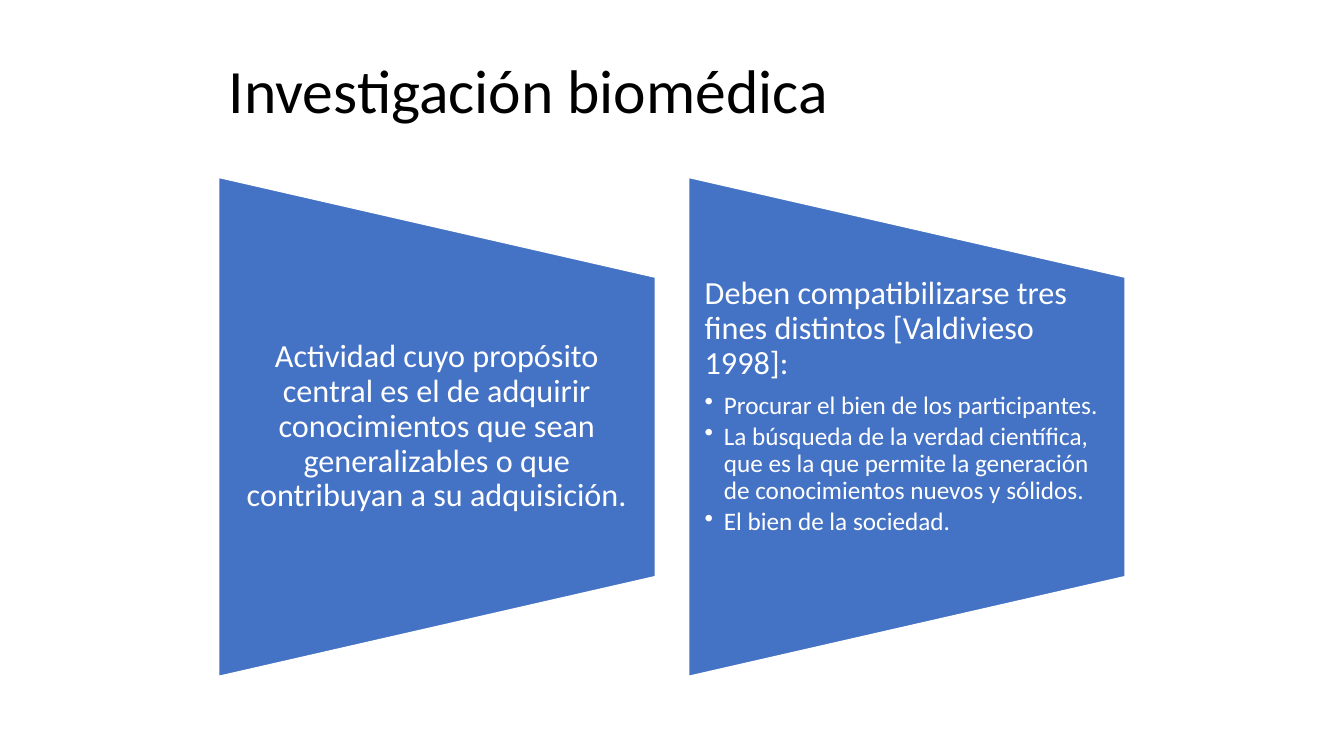
from lxml import etree
from pptx import Presentation
from pptx.dml.color import RGBColor
from pptx.enum.shapes import MSO_SHAPE as Shape
from pptx.enum.text import MSO_ANCHOR as Anchor, PP_ALIGN as Align
from pptx.oxml.ns import qn
from pptx.util import Inches, Pt

WHITE, BLUE, BLACK = "FFFFFF", "4472C4", "000000"
LEFT, TOP, WIDTH, HEIGHT, STEP = 2.17, 1.76, 4.33, 4.95, 4.66

PANELS = [
    (Align.CENTER, Anchor.MIDDLE,
     "Actividad cuyo propósito central es el de adquirir conocimientos que sean "
     "generalizables o que contribuyan a su adquisición.", []),
    (Align.LEFT, Anchor.TOP,
     "Deben compatibilizarse tres fines distintos [Valdivieso 1998]:",
     ["Procurar el bien de los participantes.",
      "La búsqueda de la verdad científica, que es la que permite la generación "
      "de conocimientos nuevos y sólidos.",
      "El bien de la sociedad."]),
]


def color(code):
    return RGBColor.from_string(code)


def style(para, text, size, code, align, after=0):
    para.text = text
    para.alignment = align
    para.line_spacing = 0.9
    para.space_before = Pt(0)
    para.space_after = Pt(after)
    font = para.runs[0].font
    font.name, font.size = "Calibri", Pt(size)
    font.color.rgb = color(code)


def bullet(para):
    props = para._p.get_or_add_pPr()
    props.set("lvl", "1")
    props.set("marL", str(Inches(0.19)))
    props.set("indent", str(Inches(-0.19)))
    etree.SubElement(props, qn("a:buChar")).set("char", "•")


def add_title(slide, x, y, w, h):
    title = slide.shapes.title
    title.left, title.top, title.width, title.height = map(Inches, (x, y, w, h))
    frame = title.text_frame
    frame.vertical_anchor = Anchor.MIDDLE
    style(frame.paragraphs[0], "Investigación biomédica", 44, BLACK, Align.LEFT)


def add_panel(slide, x, y, w, h, panel):
    """Fill the box with a sideways trapezoid and lay text over its middle 60 %."""
    align, anchor, lead, points = panel
    shift = (h - w) / 2
    shape = slide.shapes.add_shape(
        Shape.FLOWCHART_MANUAL_OPERATION,
        *map(Inches, (x - shift, y + shift, h, w)))
    shape.rotation = 270
    shape.shadow.inherit = False
    shape.fill.solid()
    shape.fill.fore_color.rgb = color(BLUE)
    shape.line.color.rgb = color(WHITE)
    shape.line.width = Pt(1)

    box = slide.shapes.add_textbox(
        *map(Inches, (x, y + h * 0.2, w, h * 0.6)))
    frame = box.text_frame
    frame.word_wrap = True
    frame.vertical_anchor = anchor
    frame.margin_left = frame.margin_right = Inches(0.16)
    frame.margin_top = frame.margin_bottom = 0
    style(frame.paragraphs[0], lead, 23, WHITE, align, 8)
    for point in points:
        para = frame.add_paragraph()
        style(para, point, 18, WHITE, align, 2.7)
        bullet(para)


def main():
    deck = Presentation()
    deck.slide_width, deck.slide_height = Inches(13.33), Inches(7.5)
    slide = deck.slides.add_slide(deck.slide_layouts[5])
    add_title(slide, LEFT, 0.3, 9, 1.25)
    for i, panel in enumerate(PANELS):
        add_panel(slide, LEFT + i * STEP, TOP, WIDTH, HEIGHT, panel)
    deck.save("out.pptx")


if __name__ == "__main__":
    main()
